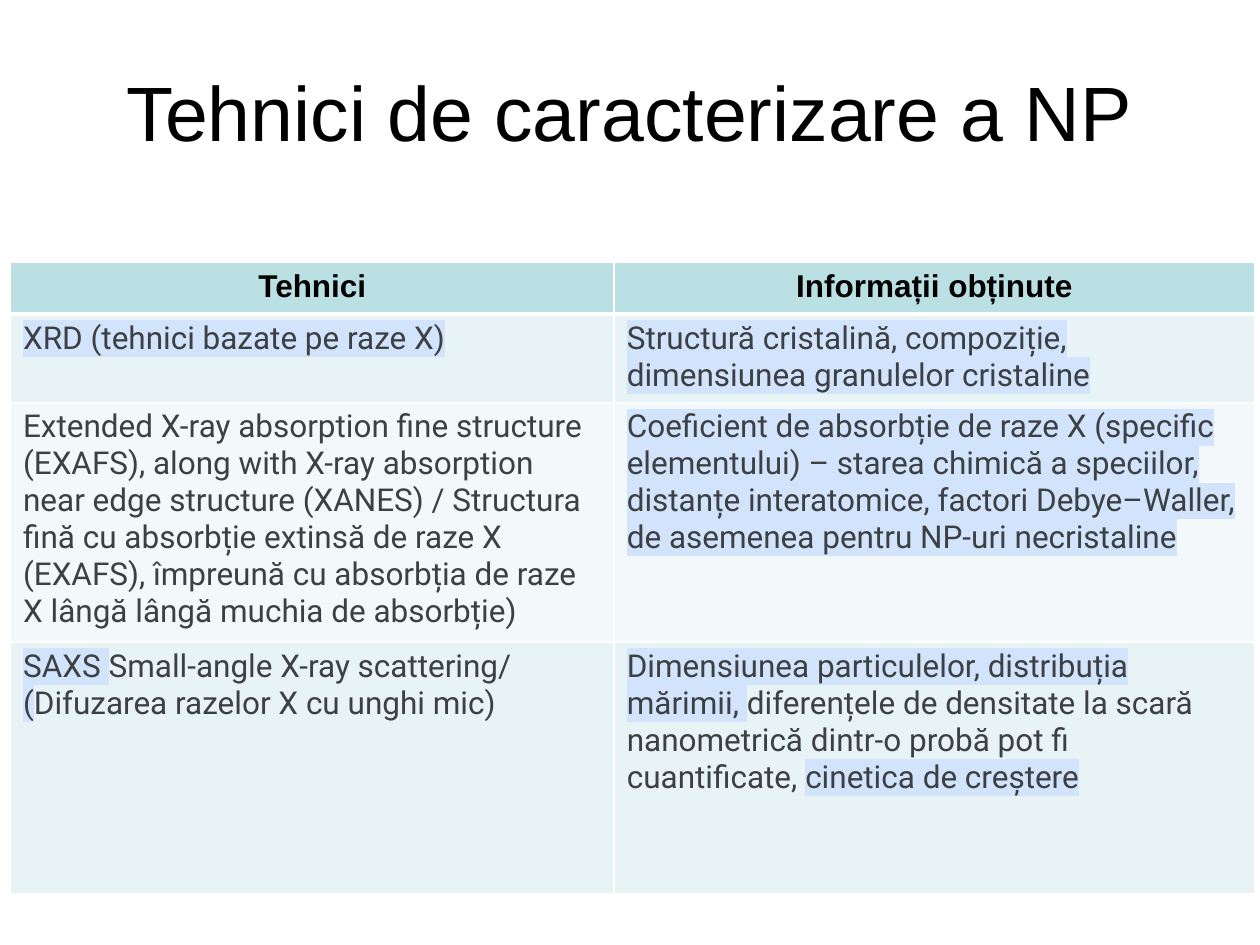
"""Build a slide with a table of nanoparticle characterisation techniques."""
from lxml.etree import SubElement
from pptx import Presentation
from pptx.dml.color import RGBColor
from pptx.enum.text import MSO_ANCHOR as Anchor, PP_ALIGN as Align
from pptx.oxml.ns import qn
from pptx.util import Pt

COLORS = {
    "title": "000000",
    "body": "3C4043",
    "highlight": "D2E3FC",
    "border": "FFFFFF",
    "header": "BBE0E3",
    "odd": "E7F3F4",
    "even": "F3F9FA",
}
TITLE = "Tehnici de caracterizare a NP"
HEADERS = ["Tehnici", "Informații obținute"]
PLAIN, MARKED = False, True
ROWS = [
    [
        [("XRD (tehnici bazate pe raze X)", MARKED)],
        [("Structură cristalină, compoziție, dimensiunea granulelor cristaline", MARKED)],
    ],
    [
        [("Extended X-ray absorption fine structure (EXAFS), along with X-ray "
          "absorption near edge structure (XANES) / Structura fină cu absorbție "
          "extinsă de raze X (EXAFS), împreună cu absorbția de raze X lângă lângă "
          "muchia de absorbție)", PLAIN)],
        [("Coeficient de absorbție de raze X (specific elementului) – starea chimică "
          "a speciilor, distanțe interatomice, factori Debye–Waller, de asemenea "
          "pentru NP-uri necristaline", MARKED)],
    ],
    [
        [("SAXS ", MARKED), ("Small-angle X-ray scattering/ ", PLAIN),
         ("(", MARKED), ("Difuzarea razelor X cu unghi mic)", PLAIN)],
        [("Dimensiunea particulelor, distribuția mărimii, ", MARKED),
         ("diferențele de densitate la scară nanometrică dintr-o probă pot fi "
          "cuantificate, ", PLAIN),
         ("cinetica de creștere", MARKED)],
    ],
]
COLUMN_WIDTHS = [345, 366]
ROW_HEIGHTS = [29.5, 49, 134, 144]


def add_span(para, text, size, font, color, bold=False, marked=False):
    span = para.add_run()
    span.text = text
    span.font.size = Pt(size)
    span.font.bold = bold
    span.font.name = font
    span.font.color.rgb = RGBColor.from_string(COLORS[color])
    if marked:
        props = span.font._element
        highlight = SubElement(props, qn("a:highlight"))
        SubElement(highlight, qn("a:srgbClr"), val=COLORS["highlight"])
        props.find(qn("a:solidFill")).addnext(highlight)


def style_cell(cell, fill, bottom):
    cell.fill.solid()
    cell.fill.fore_color.rgb = RGBColor.from_string(COLORS[fill])
    props = cell._tc.get_or_add_tcPr()
    widths = {"lnL": 1, "lnR": 1, "lnT": 1, "lnB": bottom}
    for position, (side, width) in enumerate(widths.items()):
        line = SubElement(props, qn(f"a:{side}"), w=str(Pt(width)))
        paint = SubElement(line, qn("a:solidFill"))
        SubElement(paint, qn("a:srgbClr"), val=COLORS["border"])
        props.insert(position, line)


def add_title(slide):
    box = slide.shapes.add_textbox(Pt(36), Pt(18), Pt(648), Pt(90))
    frame = box.text_frame
    frame.word_wrap = True
    frame.vertical_anchor = Anchor.MIDDLE
    para = frame.paragraphs[0]
    para.alignment = Align.CENTER
    add_span(para, TITLE, 44, "Arial", "title")


def add_techniques(slide):
    table = slide.shapes.add_table(
        len(ROWS) + 1, len(HEADERS), Pt(6), Pt(150),
        Pt(sum(COLUMN_WIDTHS)), Pt(sum(ROW_HEIGHTS))).table
    for column, width in zip(table.columns, COLUMN_WIDTHS):
        column.width = Pt(width)
    for row, height in zip(table.rows, ROW_HEIGHTS):
        row.height = Pt(height)
    for cell, text in zip(table.rows[0].cells, HEADERS):
        style_cell(cell, "header", 3)
        para = cell.text_frame.paragraphs[0]
        para.alignment = Align.CENTER
        add_span(para, text, 18, "Arial", "title", bold=True)
    for index, contents in enumerate(ROWS, 1):
        for cell, spans in zip(table.rows[index].cells, contents):
            style_cell(cell, "odd" if index % 2 else "even", 1)
            para = cell.text_frame.paragraphs[0]
            for text, marked in spans:
                add_span(para, text, 18, "Roboto", "body", marked=marked)


def main():
    deck = Presentation()
    deck.slide_width, deck.slide_height = Pt(720), Pt(540)
    slide = deck.slides.add_slide(deck.slide_layouts[6])
    add_title(slide)
    add_techniques(slide)
    deck.save("out.pptx")


if __name__ == "__main__":
    main()
